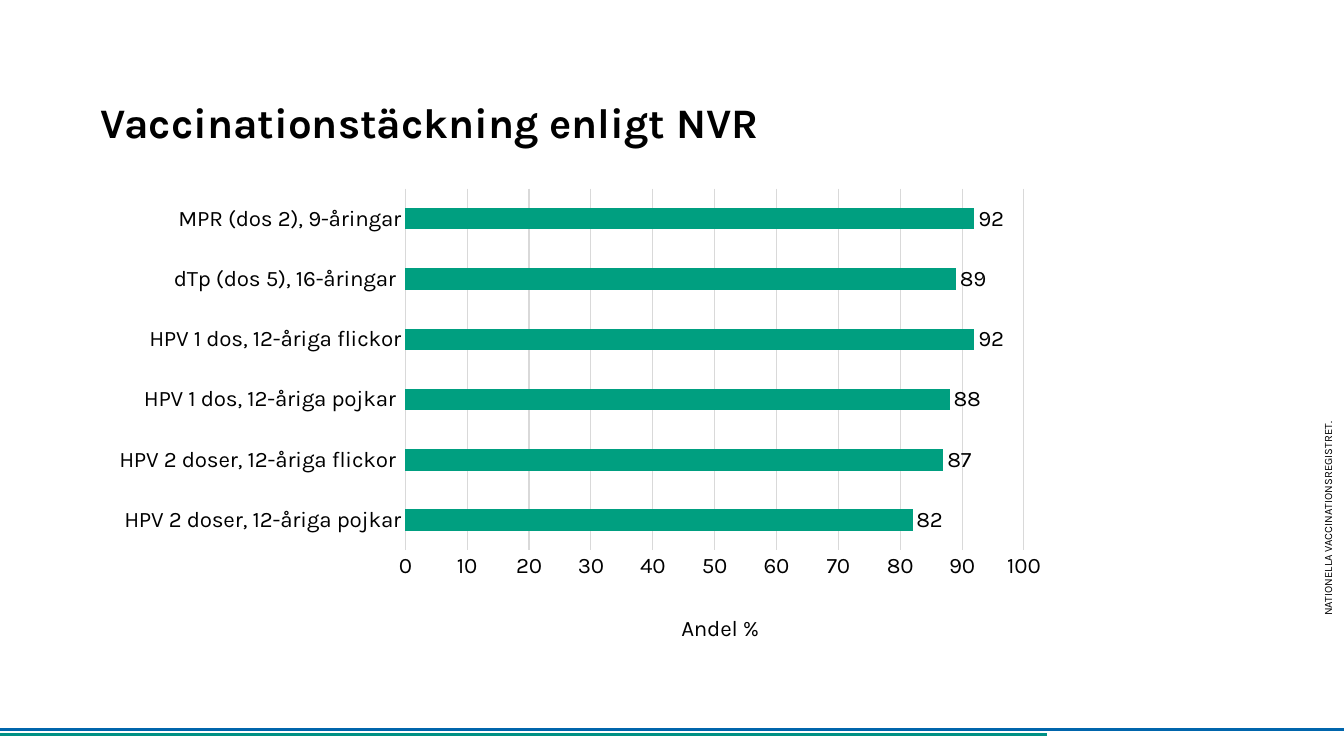
from lxml import etree
from pptx import Presentation
from pptx import util as u
from pptx.chart.data import CategoryChartData
from pptx.dml.color import RGBColor
from pptx.enum import chart as ch, shapes, text
from pptx.oxml.ns import qn

BLACK = RGBColor(0x00, 0x00, 0x00)
BLUE = RGBColor(0x00, 0x65, 0xAC)
TEAL = RGBColor(0x00, 0x91, 0x85)
GREEN = RGBColor(0x00, 0x9F, 0x80)
GRID = RGBColor(0xD9, 0xD9, 0xD9)

COVERAGE = [
    ("HPV 2 doser, 12-åriga pojkar", 82),
    ("HPV 2 doser, 12-åriga flickor ", 87),
    ("HPV 1 dos, 12-åriga pojkar ", 88),
    ("HPV 1 dos, 12-åriga flickor", 92),
    ("dTp (dos 5), 16-åringar ", 89),
    ("MPR (dos 2), 9-åringar", 92),
]


class SlideBuilder:
    font_name = "Karla"
    chart_size = 16

    def __init__(self, slide):
        self.slide = slide

    def style(self, font, size, bold=False):
        font.name = self.font_name
        font.size = u.Pt(size)
        font.bold = bold
        font.color.rgb = BLACK

    def rule(self, y, right, color):
        rule = self.slide.shapes.add_connector(
            shapes.MSO_CONNECTOR.STRAIGHT, 0, u.Pt(y), u.Pt(right), u.Pt(y))
        rule.line.color.rgb = color
        rule.line.width = u.Pt(2)
        etree.SubElement(rule._element.spPr, qn("a:effectLst"))

    def label(self, words, box, size, bold=False, rotation=0, bottom=0, spacing=None):
        label = self.slide.shapes.add_textbox(*map(u.Pt, box))
        label.rotation = rotation
        frame = label.text_frame
        frame.word_wrap = True
        frame.vertical_anchor = text.MSO_ANCHOR.BOTTOM
        frame.margin_left = frame.margin_top = frame.margin_right = 0
        frame.margin_bottom = u.Pt(bottom)
        frame.text = words
        paragraph = frame.paragraphs[0]
        if spacing:
            paragraph.line_spacing = u.Pt(spacing)
        self.style(paragraph.runs[0].font, size, bold)

    @staticmethod
    def place(part, index, **layout):
        """Give a chart part a manual layout, in fractions of the chart."""
        for old in part.findall(qn("c:layout")):
            part.remove(old)
        holder = etree.Element(qn("c:layout"))
        manual = etree.SubElement(holder, qn("c:manualLayout"))
        for tag, value in layout.items():
            etree.SubElement(manual, qn("c:" + tag)).set("val", str(value))
        part.insert(index, holder)

    def bar_chart(self, rows, axis_title, box):
        data = CategoryChartData()
        data.categories = [name for name, _ in rows]
        data.add_series("Series 1", [value for _, value in rows])
        chart = self.slide.shapes.add_chart(
            ch.XL_CHART_TYPE.BAR_CLUSTERED, *map(u.Pt, box), data).chart
        chart.has_legend = False
        chart.has_title = False
        self.style(chart.font, self.chart_size)

        # Bars and their values
        plot = chart.plots[0]
        plot.gap_width = 182
        plot.vary_by_categories = False
        bars = plot.series[0]
        bars.format.fill.solid()
        bars.format.fill.fore_color.rgb = GREEN
        values = bars.data_labels
        values.show_value = True
        values.position = ch.XL_LABEL_POSITION.OUTSIDE_END
        self.style(values.font, self.chart_size)

        # Axes
        groups, share = chart.category_axis, chart.value_axis
        for axis in (groups, share):
            axis.major_tick_mark = axis.minor_tick_mark = ch.XL_TICK_MARK.NONE
            self.style(axis.tick_labels.font, self.chart_size)
        share.minimum_scale, share.maximum_scale, share.major_unit = 0, 100, 10
        share.format.line.fill.background()
        share.has_major_gridlines = True
        for line in (groups.format.line, share.major_gridlines.format.line):
            line.color.rgb = GRID
            line.width = u.Pt(0.75)

        # Axis title and plot position
        title_frame = share.axis_title.text_frame
        title_frame.text = axis_title
        self.style(title_frame.paragraphs[0].runs[0].font, self.chart_size)
        self.place(share.axis_title._element, 1,
                   xMode="edge", yMode="edge", x=0.6, y=0.93)
        self.place(chart._chartSpace.chart.plotArea, 0, layoutTarget="inner",
                   xMode="edge", yMode="edge", x=0.317, y=0.02, w=0.644, h=0.781)


def main():
    deck = Presentation()
    deck.slide_width, deck.slide_height = u.Pt(960), u.Pt(540)
    builder = SlideBuilder(deck.slides.add_slide(deck.slide_layouts[6]))

    # Footer rules
    builder.rule(521.3, 960, BLUE)
    builder.rule(524.9, 748, TEAL)

    # Heading and source
    builder.label("Vaccinationstäckning enligt NVR", (72, 31.7, 816.5, 73.4),
                  30, bold=True, spacing=34)
    builder.label("NATIONELLA VACCINATIONSREGISTRET.", (742.3, 223.2, 408.2, 25.2),
                  8, rotation=270, bottom=5.8)

    # Vaccination coverage
    builder.bar_chart(COVERAGE, "Andel %", (72, 128.2, 686.2, 334.8))

    deck.save("out.pptx")


if __name__ == "__main__":
    main()
